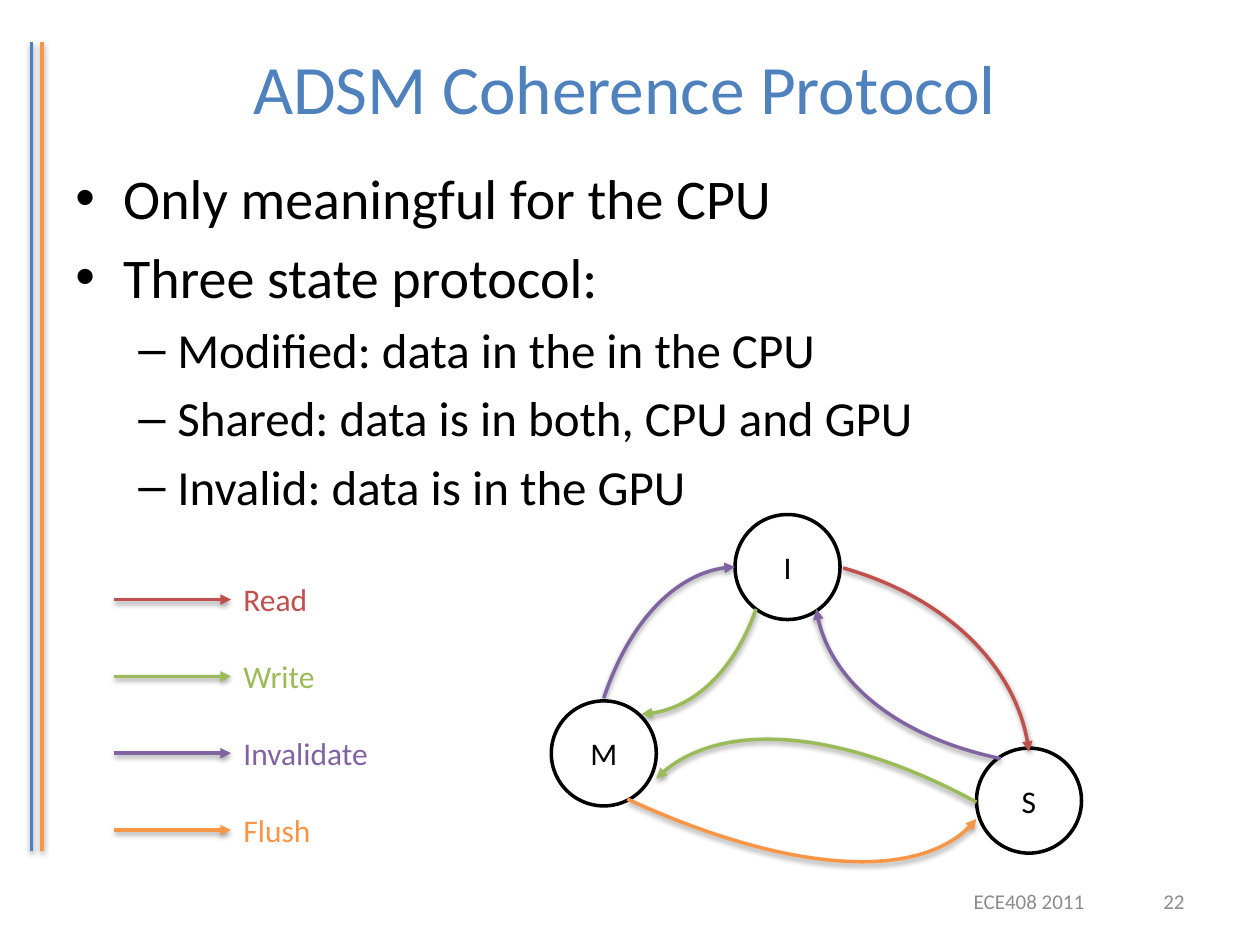
from dataclasses import dataclass

from lxml import etree
from pptx import Presentation
from pptx.dml.color import RGBColor
from pptx.enum.shapes import MSO_CONNECTOR, MSO_SHAPE
from pptx.enum.text import MSO_ANCHOR, PP_ALIGN
from pptx.oxml import parse_xml
from pptx.oxml.ns import nsdecls, qn
from pptx.util import Inches, Pt

STRAIGHT = MSO_CONNECTOR.STRAIGHT
OVAL = MSO_SHAPE.OVAL
LEFT, CENTER, RIGHT = PP_ALIGN.LEFT, PP_ALIGN.CENTER, PP_ALIGN.RIGHT
TOP, MIDDLE = MSO_ANCHOR.TOP, MSO_ANCHOR.MIDDLE

WIDTH, HEIGHT = 10, 7.5
COLUMNS = 120  # square cells, so the slide has 90 rows


@dataclass(frozen=True)
class Theme:
    font: str = "Calibri"
    ink: str = "000000"
    paper: str = "FFFFFF"
    blue: str = "4F81BD"
    muted: str = "8C8C8C"
    red: str = "C0504D"
    green: str = "9BBB59"
    purple: str = "8064A2"
    orange: str = "F79646"
    title: float = 39.6
    bullet: float = 32
    sub_bullet: float = 28
    label: float = 18
    footer: float = 12
    stroke: float = 2


def cells(*counts):
    return [Inches(count * WIDTH / COLUMNS) for count in counts]


def add_text(paragraph, text, *, font, size, color, align=LEFT):
    paragraph.alignment = align
    run = paragraph.add_run()
    run.text = text
    run.font.name = font
    run.font.size = Pt(size)
    run.font.color.rgb = RGBColor.from_string(color)


def add_bullet(paragraph, mark, margin, hanging):
    properties = paragraph._p.get_or_add_pPr()
    properties.set("marL", str(Inches(margin)))
    properties.set("indent", str(-Inches(hanging)))
    etree.SubElement(properties, qn("a:buFont"), typeface="Arial")
    etree.SubElement(properties, qn("a:buChar"), char=mark)


class Board:
    """Draws on one slide; every place is given in grid cells."""

    def __init__(self, slide, theme):
        self.shapes = slide.shapes
        self.theme = theme

    def _stroke(self, shape, color, arrow):
        """Colour a line, drop its soft shadow and add an arrowhead if asked."""
        shape.line.color.rgb = RGBColor.from_string(color)
        shape.line.width = Pt(self.theme.stroke)
        properties = shape.element.spPr
        if arrow:
            etree.SubElement(properties.find(qn("a:ln")), qn("a:tailEnd"), type="triangle")
        properties.append(parse_xml(
            f'<a:effectLst {nsdecls("a")}>'
            '<a:outerShdw blurRad="40000" dist="20000" dir="5400000" rotWithShape="0">'
            '<a:srgbClr val="000000"><a:alpha val="38000"/></a:srgbClr>'
            '</a:outerShdw></a:effectLst>'))

    def line(self, start, end, color, arrow=False):
        connector = self.shapes.add_connector(STRAIGHT, *cells(*start, *end))
        self._stroke(connector, color, arrow)

    def curve(self, points, color):
        """Draw a cubic Bezier arrow from its start, two controls and end."""
        start, *rest = [cells(*point) for point in points]
        builder = self.shapes.build_freeform(*start)
        builder.add_line_segments(rest, close=False)
        arc = builder.convert_to_shape()
        arc.fill.background()
        outline = arc.element.spPr.find(".//" + qn("a:path"))
        bezier = etree.SubElement(outline, qn("a:cubicBezTo"))
        for segment in outline.findall(qn("a:lnTo")):
            bezier.append(segment[0])
            outline.remove(segment)
        self._stroke(arc, color, arrow=True)

    def text(self, box, text, *, size, color, align=LEFT, anchor=TOP):
        frame = self.frame(box, anchor)
        add_text(frame.paragraphs[0], text, font=self.theme.font,
                 size=size, color=color, align=align)

    def frame(self, box, anchor=TOP):
        frame = self.shapes.add_textbox(*cells(*box)).text_frame
        frame.word_wrap = True
        frame.vertical_anchor = anchor
        return frame

    def bullets(self, box, items):
        frame = self.frame(box)
        styles = [("•", 0.38, 0.38, self.theme.bullet),
                  ("–", 0.81, 0.31, self.theme.sub_bullet)]
        for index, (level, text) in enumerate(items):
            mark, margin, hanging, size = styles[level]
            paragraph = frame.add_paragraph() if index else frame.paragraphs[0]
            paragraph.level = level
            add_bullet(paragraph, mark, margin, hanging)
            paragraph.space_before = Pt(0.2 * size if index else 0)
            add_text(paragraph, text, font=self.theme.font,
                     size=size, color=self.theme.ink)

    def state(self, left, top, name):
        circle = self.shapes.add_shape(OVAL, *cells(left, top, 10, 10))
        circle.shadow.inherit = False
        circle.fill.solid()
        circle.fill.fore_color.rgb = RGBColor.from_string(self.theme.paper)
        circle.line.color.rgb = RGBColor.from_string(self.theme.ink)
        circle.line.width = Pt(self.theme.stroke)
        circle.text_frame.vertical_anchor = MIDDLE
        add_text(circle.text_frame.paragraphs[0], name, font=self.theme.font,
                 size=self.theme.label, color=self.theme.ink, align=CENTER)


def main():
    deck = Presentation()
    deck.slide_width, deck.slide_height = Inches(WIDTH), Inches(HEIGHT)
    theme = Theme()
    board = Board(deck.slides.add_slide(deck.slide_layouts[6]), theme)

    for column, color in ((3, theme.blue), (4, theme.orange)):
        board.line((column, 4), (column, 81), color)

    board.text((5, 3.6, 109, 9.4), "ADSM Coherence Protocol", size=theme.title,
               color=theme.blue, align=CENTER, anchor=MIDDLE)
    board.bullets((6, 15, 108, 36), [
        (0, "Only meaningful for the CPU"),
        (0, "Three state protocol:"),
        (1, "Modified: data in the in the CPU"),
        (1, "Shared: data is in both, CPU and GPU"),
        (1, "Invalid: data is in the GPU"),
    ])

    for left, top, name in ((52.5, 66.75, "M"), (93, 71.25, "S"), (70, 49, "I")):
        board.state(left, top, name)

    legend = [("Read", theme.red), ("Write", theme.green),
              ("Invalidate", theme.purple), ("Flush", theme.orange)]
    for index, (action, color) in enumerate(legend):
        row = 57.1 + 7.32 * index
        board.line((10.9, row), (22, row), color, arrow=True)
        board.text((22, row - 2.4, 15, 4.8), action, size=theme.label, color=color)

    transitions = [
        (theme.purple, [(57.5, 66.5), (59.9, 59.3), (64.8, 54.1), (70, 54)]),
        (theme.green, [(72, 58), (70, 63.75), (65.65, 67.9), (61.1, 68)]),
        (theme.red, [(80.3, 54.1), (89.75, 56.75), (97.1, 63.6), (98, 71.6)]),
        (theme.purple, [(95.3, 72.25), (85.9, 70.3), (78.7, 64.8), (77.75, 58)]),
        (theme.green, [(93, 76.4), (80.5, 69.6), (68.15, 68.4), (62.5, 74.15)]),
        (theme.orange, [(59.75, 76.1), (74.65, 83), (88.2, 84.1), (93, 78)]),
    ]
    for color, points in transitions:
        board.curve(points, color)

    board.text((90, 83.4, 16, 4.8), "ECE408 2011", size=theme.footer,
               color=theme.muted, align=CENTER, anchor=MIDDLE)
    board.text((107, 83.4, 7, 4.8), "22", size=theme.footer,
               color=theme.muted, align=RIGHT, anchor=MIDDLE)
    deck.save("out.pptx")


if __name__ == "__main__":
    main()
